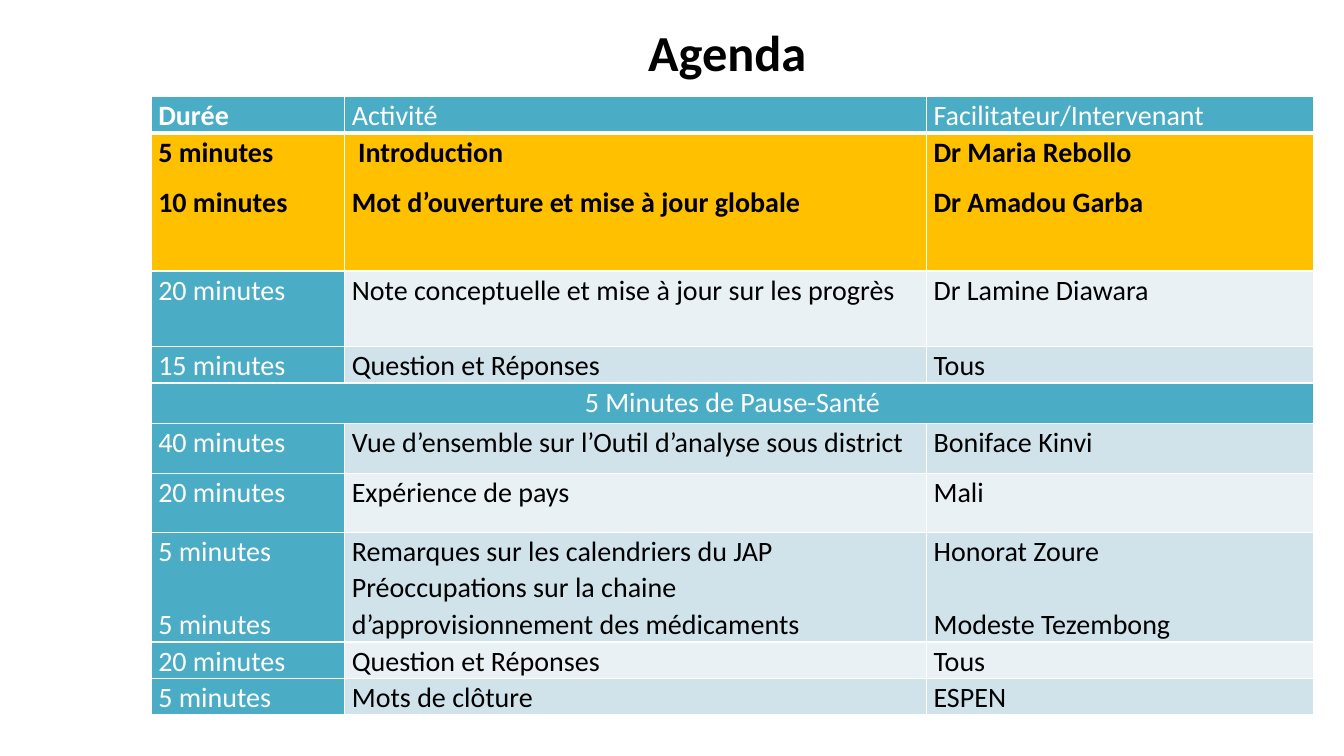
import pptx
import pptx.util
import pptx.dml.color
import pptx.enum.text
import pptx.oxml
import pptx.oxml.ns
from pptx.util import Inches

RGBColor = pptx.dml.color.RGBColor
Align = pptx.enum.text.PP_ALIGN
BLACK = RGBColor(0x00, 0x00, 0x00)
WHITE = RGBColor(0xFF, 0xFF, 0xFF)
TEAL = RGBColor(0x4B, 0xAC, 0xC6)
AMBER = RGBColor(0xFF, 0xC0, 0x00)
PALE = RGBColor(0xE9, 0xF1, 0xF5)
LIGHT = RGBColor(0xD0, 0xE3, 0xEA)
FONT = "Calibri"
LINE_HEIGHT = 26.1  # points taken by one table line

COLUMN_WIDTHS = [1.92, 5.77, 3.84]
HEADER, CURRENT, BREAK = 0, 1, 4  # rows with their own look
SPACED_OUT = 7  # row whose entries stand one line apart

# Row height, then one list of paragraphs per cell
AGENDA = [
    (0.36, ["Durée"], ["Activité"], ["Facilitateur/Intervenant"]),
    (1.37, ["5 minutes", "10 minutes"],
     [" Introduction", "Mot d’ouverture et mise à jour globale"],
     ["Dr Maria Rebollo", "Dr Amadou Garba"]),
    (0.75, ["20 minutes"], ["Note conceptuelle et mise à jour sur les progrès"],
     ["Dr Lamine Diawara"]),
    (0.36, ["15 minutes"], ["Question et Réponses"], ["Tous"]),
    (0.4, ["5 Minutes de Pause-Santé"]),
    (0.5, ["40 minutes"], ["Vue d’ensemble sur l’Outil d’analyse sous district"],
     ["Boniface Kinvi"]),
    (0.58, ["20 minutes"], ["Expérience de pays"], ["Mali"]),
    (1.09, ["5 minutes", "5 minutes"],
     ["Remarques sur les calendriers du JAP\v"
      "Préoccupations sur la chaine d’approvisionnement des médicaments"],
     ["Honorat Zoure", "Modeste Tezembong"]),
    (0.36, ["20 minutes"], ["Question et Réponses"], ["Tous"]),
    (0.36, ["5 minutes"], ["Mots de clôture"], ["ESPEN"]),
]


def format_runs(paragraph, size, color, bold):
    for run in paragraph.runs:
        run.font.name = FONT
        run.font.size = pptx.util.Pt(size)
        run.font.color.rgb = color
        run.font.bold = bold


def add_borders(cell, bottom_width):
    properties = cell._tc.get_or_add_tcPr()
    for side, width in (("L", 1), ("R", 1), ("T", 1), ("B", bottom_width)):
        properties.append(pptx.oxml.parse_xml(
            f'<a:ln{side} {pptx.oxml.ns.nsdecls("a")} w="{pptx.util.Pt(width)}">'
            f'<a:solidFill><a:srgbClr val="{WHITE}"/></a:solidFill></a:ln{side}>'))


def cell_style(row, column):
    """Return fill colour, text colour and boldness."""
    if row == CURRENT:
        return AMBER, BLACK, True
    if row in (HEADER, BREAK) or column == 0:
        return TEAL, WHITE, row == HEADER and column == 0
    return (LIGHT if row % 2 else PALE), BLACK, False


def fill_cell(cell, row, column, lines):
    fill, color, bold = cell_style(row, column)
    add_borders(cell, 3 if row == HEADER else 1)
    cell.fill.solid()
    cell.fill.fore_color.rgb = fill
    cell.margin_left = cell.margin_right = Inches(0.07)
    cell.margin_top = cell.margin_bottom = 0
    cell.text_frame.text = "\n".join(lines)
    for index, paragraph in enumerate(cell.text_frame.paragraphs):
        paragraph.line_spacing = 1.07
        paragraph.space_after = pptx.util.Pt(0 if row == SPACED_OUT else 10)
        if row == SPACED_OUT and index:
            paragraph.space_before = pptx.util.Pt(LINE_HEIGHT)
        if row == BREAK:
            paragraph.alignment = Align.CENTER
        format_runs(paragraph, 20, color, bold)


def add_title(slide, left, top, width, height):
    title = slide.shapes.add_textbox(left, top, width, height)
    title.text_frame.word_wrap = True
    title.text_frame.vertical_anchor = pptx.enum.text.MSO_ANCHOR.MIDDLE
    title.text_frame.text = "Agenda "
    paragraph = title.text_frame.paragraphs[0]
    paragraph.alignment = Align.CENTER
    format_runs(paragraph, 36, BLACK, True)


def add_agenda(slide, left, top, width, height):
    table = slide.shapes.add_table(
        len(AGENDA), len(COLUMN_WIDTHS), left, top, width, height).table
    table.first_row = table.horz_banding = False
    for column, column_width in zip(table.columns, COLUMN_WIDTHS):
        column.width = Inches(column_width)
    # The break spans the whole table
    table.cell(BREAK, 0).merge(table.cell(BREAK, len(COLUMN_WIDTHS) - 1))
    for row, (row_height, *entries) in enumerate(AGENDA):
        table.rows[row].height = Inches(row_height)
        for column, lines in enumerate(entries):
            fill_cell(table.cell(row, column), row, column, lines)


def main():
    presentation = pptx.Presentation()
    presentation.slide_width = Inches(13.33)
    presentation.slide_height = Inches(7.5)
    slide = presentation.slides.add_slide(presentation.slide_layouts[6])
    add_title(slide, Inches(1.52), Inches(0.18), Inches(11.5), Inches(0.65))
    add_agenda(slide, Inches(1.5), Inches(0.96), Inches(11.53), Inches(6.13))
    presentation.save("out.pptx")


if __name__ == "__main__":
    main()
